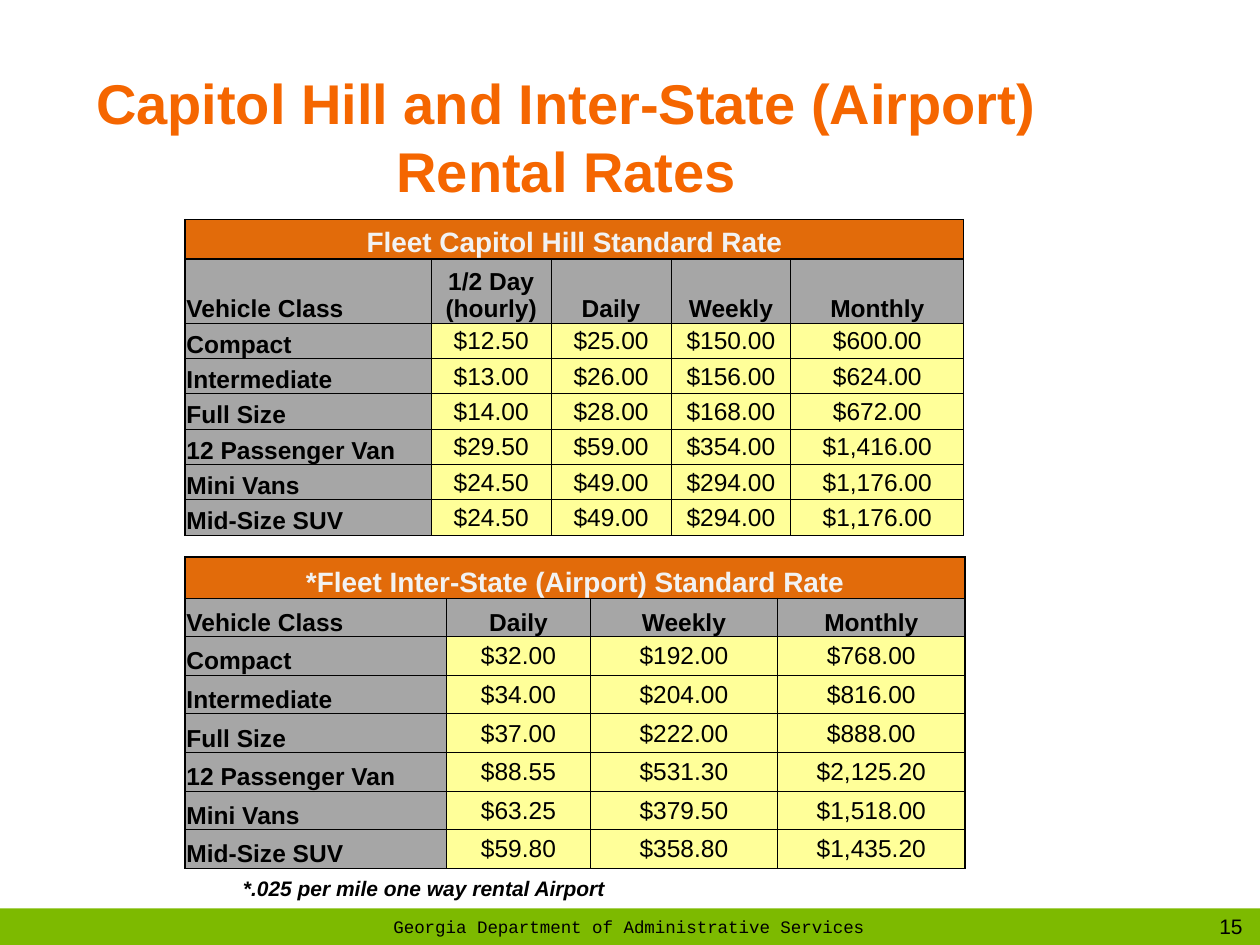
import pptx
import pptx.dml.color
import pptx.enum.shapes
import pptx.enum.text
import pptx.util
import lxml.etree

ALIGN = pptx.enum.text.PP_ALIGN
ANCHOR = pptx.enum.text.MSO_ANCHOR
WIDE, HIGH = pptx.util.Inches(10), pptx.util.Inches(7.5)
PLAIN = "{2D5ABB26-0587-4C30-8999-92F81FD0307C}"  # no style, no grid

THEME = {
    "orange": "F56600", "green": "7DBA00", "black": "000000",
    "banner": "E26B0A", "pale": "F2F2F2", "gray": "A6A6A6", "cream": "FFFF99",
    "title": 32, "head": 16, "cell": 14, "note": 12, "foot": 10,
    "sans": "Arial", "mono": "Courier New",
    "thick": 1, "thin": 0.5,
}

CLASSES = ["Compact", "Intermediate", "Full Size", "12 Passenger Van",
           "Mini Vans", "Mid-Size SUV"]

# Boxes are left, top, width, height in percent of the slide;
# columns and rows are weights that share out the width and height.
AIRPORT = {
    "box": (14.7, 58.93, 61.9, 32.95),
    "cols": (2.08, 1.14, 1.49, 1.49),
    "rows": (0.33,) + (0.31,) * 7,
    "title": "*Fleet Inter-State (Airport) Standard Rate",
    "rule": "thin",
    "heads": ["Vehicle Class", "Daily", "Weekly", "Monthly"],
    "rates": [(32, 192, 768), (34, 204, 816), (37, 222, 888),
              (88.55, 531.3, 2125.2), (63.25, 379.5, 1518),
              (59.8, 358.8, 1435.2)],
}
CAPITOL = {
    "box": (14.7, 23.25, 61.8, 33.4),
    "cols": (1.95, 0.95, 0.95, 0.95, 1.37),
    "rows": (0.31, 0.51) + (0.28,) * 6,
    "title": "Fleet Capitol Hill Standard Rate",
    "rule": "thick",
    "heads": ["Vehicle Class", "1/2 Day (hourly)", "Daily", "Weekly",
              "Monthly"],
    "rates": [(12.5, 25, 150, 600), (13, 26, 156, 624), (14, 28, 168, 672),
              (29.5, 59, 354, 1416), (24.5, 49, 294, 1176),
              (24.5, 49, 294, 1176)],
}


def color(name):
    return pptx.dml.color.RGBColor.from_string(THEME[name])


def place(box):
    """Turn percent of the slide into lengths."""
    return [int(part * side / 100)
            for part, side in zip(box, (WIDE, HIGH, WIDE, HIGH))]


def write(frame, text, size, ink="black", face="sans", align=ALIGN.CENTER,
          bold=False, italic=False):
    para = frame.paragraphs[0]
    para.alignment = align
    run = para.add_run()
    run.text = text
    style = {"name": THEME[face], "size": pptx.util.Pt(THEME[size]),
             "bold": bold, "italic": italic}
    for key, value in style.items():
        setattr(run.font, key, value)
    run.font.color.rgb = color(ink)


def add_text(slide, box, text, size, anchor=ANCHOR.TOP, **style):
    frame = slide.shapes.add_textbox(*place(box)).text_frame
    frame.word_wrap = True
    frame.vertical_anchor = anchor
    write(frame, text, size, **style)


def add_band(slide, box):
    rect = pptx.enum.shapes.MSO_SHAPE.RECTANGLE
    band = slide.shapes.add_shape(rect, *place(box))
    band.shadow.inherit = False
    band.fill.solid()
    band.fill.fore_color.rgb = color("green")
    band.line.fill.background()


def edge(cell, sides):
    """Draw cell borders; sides maps L, R, T, B to a theme weight."""
    for side, weight in sides.items():
        props = cell._tc.get_or_add_tcPr()
        line = lxml.etree.SubElement(
            props, pptx.oxml.ns.qn("a:ln" + side),
            w=str(pptx.util.Pt(THEME[weight])))
        fill = lxml.etree.SubElement(line, pptx.oxml.ns.qn("a:solidFill"))
        lxml.etree.SubElement(fill, pptx.oxml.ns.qn("a:srgbClr"),
                              val=THEME["black"])


def fill_cell(cell, text, fill, sides, anchor=ANCHOR.BOTTOM, size="cell",
              **style):
    edge(cell, sides)
    pad = pptx.util.Inches(0.01)
    form = {"margin_left": pad, "margin_right": pad, "margin_top": pad,
            "margin_bottom": 0, "vertical_anchor": anchor}
    for key, value in form.items():
        setattr(cell, key, value)
    cell.fill.solid()
    cell.fill.fore_color.rgb = color(fill)
    write(cell.text_frame, text, size, **style)


def share(lines, key, weights, total):
    for line, weight in zip(lines, weights):
        setattr(line, key, int(total * weight / sum(weights)))


def add_rates(slide, data):
    box = place(data["box"])
    count = len(data["cols"])
    table = slide.shapes.add_table(len(data["rows"]), count, *box).table
    table.first_row = table.horz_banding = False
    table._tbl.tblPr.find(pptx.oxml.ns.qn("a:tableStyleId")).text = PLAIN
    share(table.columns, "width", data["cols"], box[2])
    share(table.rows, "height", data["rows"], box[3])

    top = table.cell(0, 0)
    top.merge(table.cell(0, count - 1))
    fill_cell(top, data["title"], "banner",
              {"L": "thick", "R": "thick", "T": "thick", "B": data["rule"]},
              size="head", ink="pale", bold=True)

    body = [data["heads"]] + [
        [name] + [f"${rate:,.2f}" for rate in rates]
        for name, rates in zip(CLASSES, data["rates"])]
    for row, texts in enumerate(body, 1):
        for col, text in enumerate(texts):
            label = row == 1 or col == 0
            sides = {"L": "thick" if col == 0 else "thin",
                     "R": "thick" if col == count - 1 else "thin",
                     "T": data["rule"] if row == 1 else "thin",
                     "B": "thin"}
            fill_cell(table.cell(row, col), text,
                      "gray" if label else "cream", sides,
                      anchor=ANCHOR.BOTTOM if label else ANCHOR.MIDDLE,
                      align=ALIGN.LEFT if col == 0 else ALIGN.CENTER,
                      bold=label)


def main():
    deck = pptx.Presentation()
    deck.slide_width, deck.slide_height = WIDE, HIGH
    slide = deck.slides.add_slide(deck.slide_layouts[6])
    add_band(slide, (0, 96.13, 100, 3.87))
    add_text(slide, (95.4, 96, 4.6, 4), "15", "note")
    add_text(slide, (29.9, 96.27, 40, 3.73),
             "Georgia Department of Administrative Services", "foot",
             face="mono")
    add_text(slide, (1.5, 7.73, 86.9, 13.33),
             "Capitol Hill and Inter-State (Airport) Rental Rates", "title",
             anchor=ANCHOR.MIDDLE, ink="orange", bold=True)
    for data in (AIRPORT, CAPITOL):
        add_rates(slide, data)
    add_text(slide, (18.3, 92, 31.7, 4),
             "*.025 per mile one way rental Airport", "note",
             align=ALIGN.LEFT, bold=True, italic=True)
    deck.save("out.pptx")


if __name__ == "__main__":
    main()
